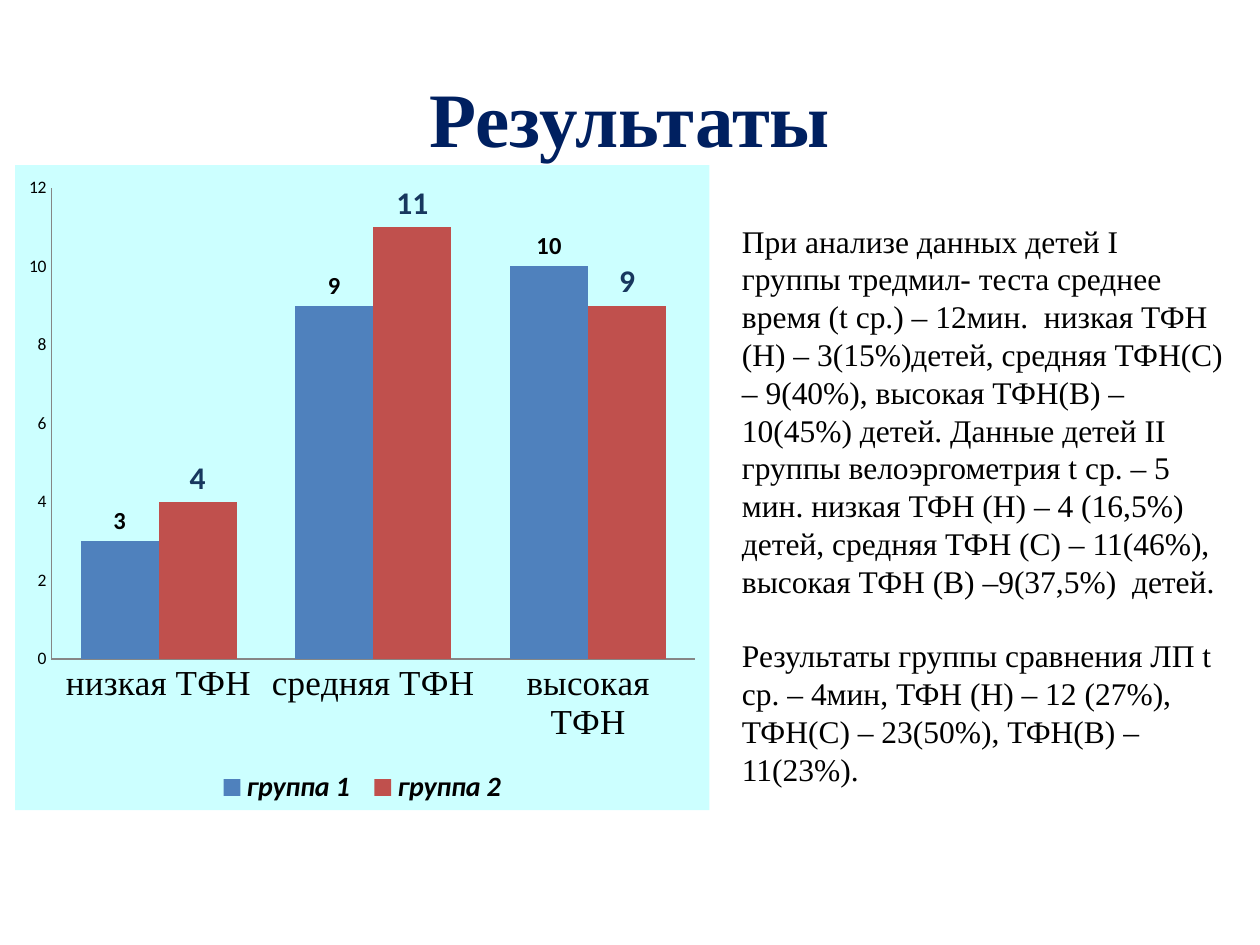
from dataclasses import dataclass

from lxml import etree
from pptx import Presentation
from pptx.chart.data import CategoryChartData
from pptx.dml.color import RGBColor
from pptx.enum.chart import (XL_CHART_TYPE as ChartType, XL_LABEL_POSITION as LabelPosition,
                             XL_LEGEND_POSITION as LegendPosition, XL_TICK_MARK as TickMark)
from pptx.enum.text import MSO_ANCHOR as Anchor, PP_ALIGN as Align
from pptx.oxml import parse_xml
from pptx.oxml.ns import nsdecls
from pptx.util import Inches, Pt


@dataclass(frozen=True)
class Theme:
    serif: str = "Times New Roman"
    sans: str = "Calibri"
    title: str = "002060"
    text: str = "000000"
    axis: str = "868686"
    chart_back: str = "CCFFFF"
    title_size: int = 44
    body_size: int = 18
    axis_size: int = 10
    category_size: int = 20
    legend_size: int = 16


THEME = Theme()
CATEGORIES = ["низкая ТФН", "средняя ТФН", "высокая ТФН"]
# name, values, bar colour, label size, label colour
GROUPS = [
    ("группа 1 ", (3, 9, 10), "4F81BD", 14, THEME.text),
    ("группа 2", (4, 11, 9), "C0504D", 18, "17375E"),
]
FINDINGS = [
    "При анализе данных детей I группы тредмил- теста среднее время (t ср.) – 12мин.  "
    "низкая ТФН (Н) – 3(15%)детей, средняя ТФН(С) – 9(40%), высокая ТФН(В) –10(45%) детей. "
    "Данные детей II группы велоэргометрия t ср. – 5 мин. низкая ТФН (Н) – 4 (16,5%) детей, "
    "средняя ТФН (С) – 11(46%), высокая ТФН (В) –9(37,5%)  детей.",
    "Результаты группы сравнения ЛП t ср. – 4мин, ТФН (Н) – 12 (27%), "
    "ТФН(С) – 23(50%), ТФН(В) – 11(23%).",
]


def set_font(font, name, size, color, bold=False, italic=False):
    font.name, font.size = name, Pt(size)
    font.bold, font.italic = bold, italic
    font.color.rgb = RGBColor.from_string(color)


def place_title(page, box, text):
    title = page.shapes.title
    title.left, title.top, title.width, title.height = map(Inches, box)
    frame = title.text_frame
    frame.text = text
    frame.vertical_anchor = Anchor.MIDDLE
    para = frame.paragraphs[0]
    para.alignment = Align.CENTER
    set_font(para.font, THEME.serif, THEME.title_size, THEME.title, bold=True)


def fill_chart(chart, color):
    """Give the whole chart area a solid fill without a border."""
    space = chart.element
    area = parse_xml(
        f'<c:spPr {nsdecls("c", "a")}><a:solidFill><a:srgbClr val="{color}"/></a:solidFill>'
        '<a:ln><a:noFill/></a:ln></c:spPr>')
    space.chart.addnext(area)


def place_chart(page, box):
    data = CategoryChartData()
    data.categories = CATEGORIES
    for name, values, *_ in GROUPS:
        data.add_series(name, values)
    chart = page.shapes.add_chart(ChartType.COLUMN_CLUSTERED, *map(Inches, box), data).chart
    set_font(chart.font, THEME.sans, THEME.axis_size, THEME.text)
    fill_chart(chart, THEME.chart_back)
    chart.has_title = False

    chart.has_legend = True
    legend = chart.legend
    legend.position = LegendPosition.BOTTOM
    legend.include_in_layout = False
    set_font(legend.font, THEME.sans, THEME.legend_size, THEME.text, bold=True, italic=True)

    for axis in (chart.category_axis, chart.value_axis):
        axis.has_major_gridlines = False
        axis.major_tick_mark = axis.minor_tick_mark = TickMark.NONE
        axis.format.line.color.rgb = RGBColor.from_string(THEME.axis)
    set_font(chart.category_axis.tick_labels.font, THEME.serif, THEME.category_size, THEME.text)
    scale = chart.value_axis
    scale.minimum_scale, scale.maximum_scale, scale.major_unit = 0, 12, 2

    plot = chart.plots[0]
    plot.gap_width, plot.overlap = 75, 0
    plot.vary_by_categories = False
    for series, (_, _, color, size, label_color) in zip(plot.series, GROUPS):
        series.format.fill.solid()
        series.format.fill.fore_color.rgb = RGBColor.from_string(color)
        labels = series.data_labels
        labels.show_value = True
        labels.position = LabelPosition.OUTSIDE_END
        set_font(labels.font, THEME.sans, size, label_color, bold=True)


def place_findings(page, box):
    frame = page.shapes.add_textbox(*map(Inches, box)).text_frame
    frame.word_wrap = True
    for index, text in enumerate(FINDINGS):
        para = frame.paragraphs[0] if index == 0 else frame.add_paragraph()
        para.text = text
        if index:
            para.space_before = Pt(21)
        set_font(para.font, THEME.serif, THEME.body_size, THEME.text)


def main():
    deck = Presentation()
    deck.slide_width, deck.slide_height = Inches(10), Inches(7.5)
    page = deck.slides.add_slide(deck.slide_layouts.get_by_name("Title Only"))
    place_title(page, (0.5, 0.3, 9, 1.25), "Результаты")
    place_chart(page, (0.12, 1.31, 5.51, 5.12))
    place_findings(page, (5.79, 1.71, 4.02, 4.64))
    deck.save("out.pptx")


if __name__ == "__main__":
    main()
